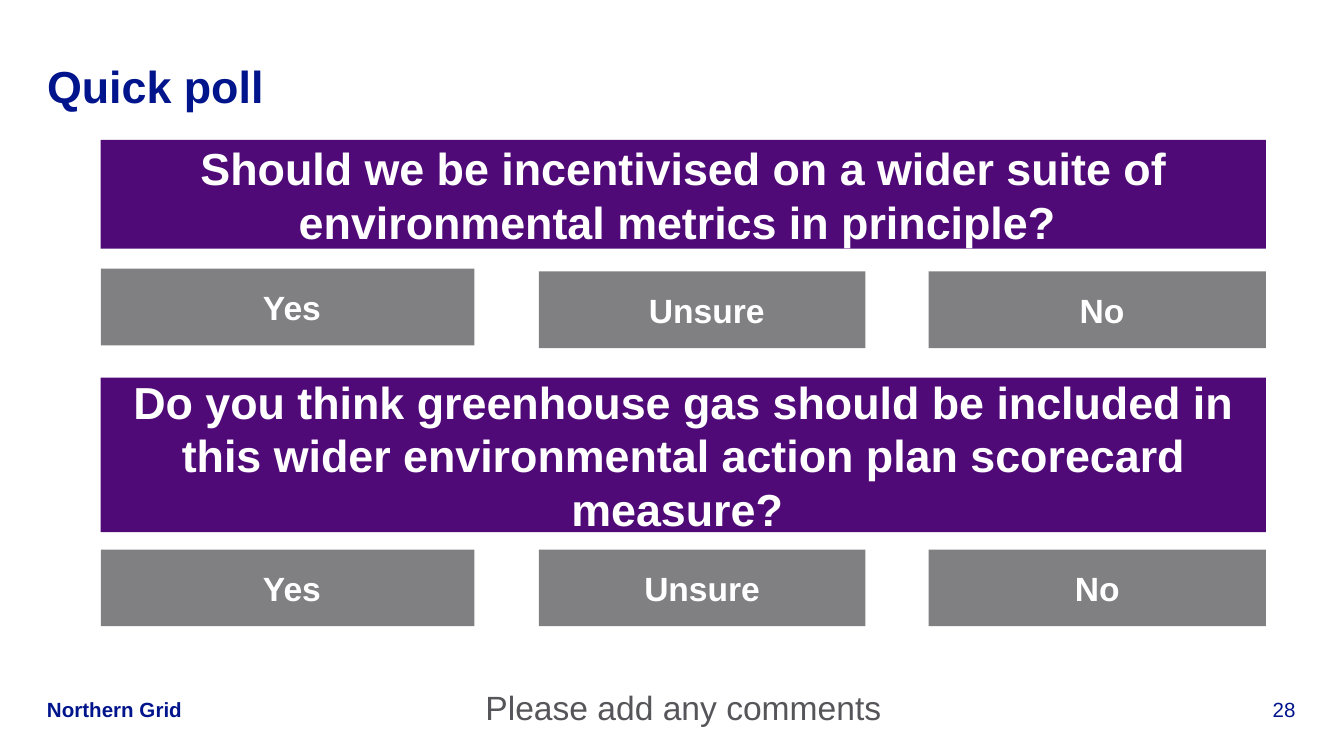
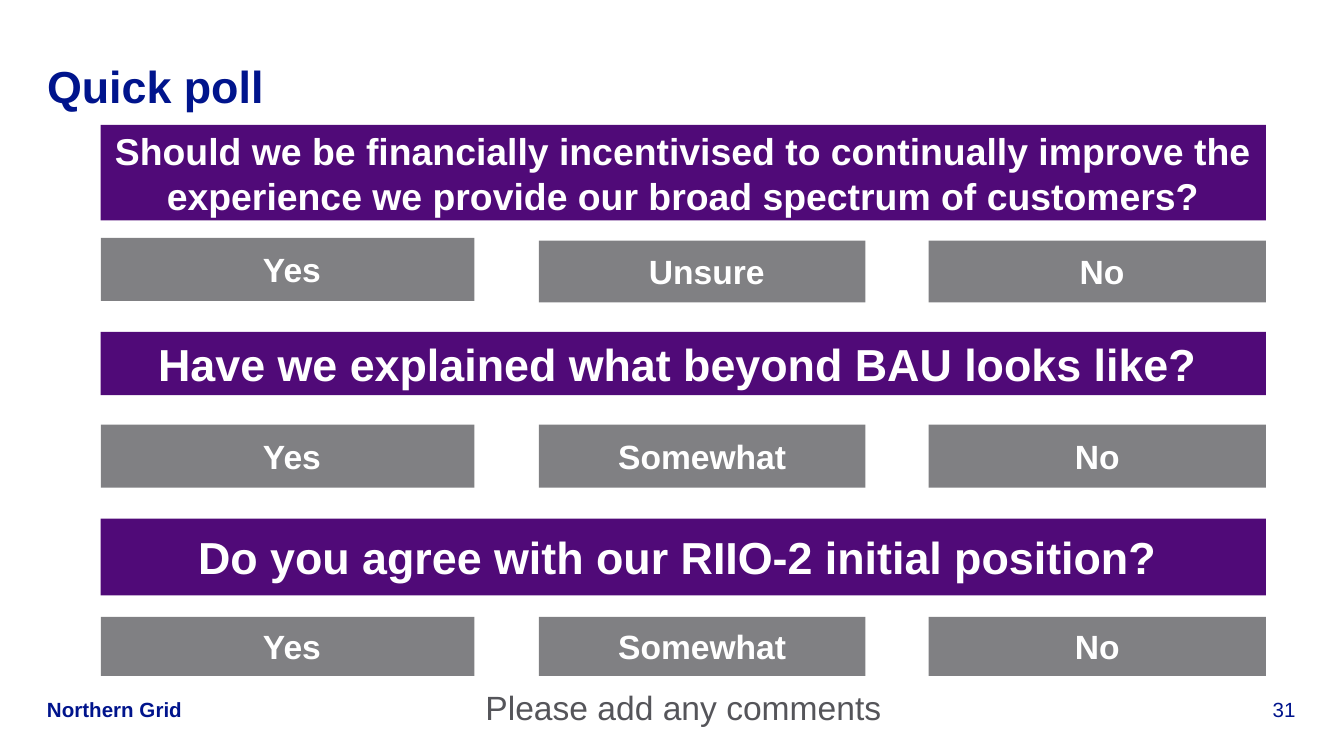
from pptx import Presentation
from pptx.dml.color import RGBColor
from pptx.enum.shapes import MSO_SHAPE
from pptx.enum.text import MSO_ANCHOR, PP_ALIGN
from pptx.util import Inches, Pt

NAVY, PURPLE, GREY, SLATE, WHITE = "00148C", "500A78", "808083", "55555A", "FFFFFF"
FONT = "Arial"
TITLE = "Quick poll"
COMPANY = "Northern Grid"
COMMENTS = "Please add any comments"

MARGIN = 0.35
CONTENT_LEFT, CONTENT_WIDTH = 0.75, 8.67
ANSWER_COLUMNS = [(0.75, 2.78), (4.01, 2.43), (6.91, 2.51)]
FOOTER_TOP, FOOTER_HEIGHT = 5.18, 0.19

POLLS = [
    {
        "number": "28",
        "questions": [
            {"text": "Should we be incentivised on a wider suite of environmental metrics in principle? ",
             "size": 24, "top": 1.04, "height": 0.81, "answers": [" Yes", " Unsure", " No"],
             "answer_tops": [2, 2.02, 2.02], "answer_heights": [0.57] * 3},
            {"text": "Do you think greenhouse gas should be included in this wider environmental "
                     "action plan scorecard measure? ",
             "size": 24, "top": 2.81, "height": 1.15, "answers": [" Yes", "Unsure", "No"],
             "answer_tops": [4.09] * 3, "answer_heights": [0.57] * 3},
        ],
    },
    {
        "number": "31",
        "questions": [
            {"text": "Should we be financially incentivised to continually improve the experience "
                     "we provide our broad spectrum of customers?",
             "size": 20, "top": 0.93, "height": 0.71, "answers": [" Yes", " Unsure", " No"],
             "answer_tops": [1.77, 1.79, 1.79], "answer_heights": [0.47, 0.46, 0.46]},
            {"text": "Have we explained what beyond BAU looks like? ",
             "size": 24, "top": 2.47, "height": 0.47, "answers": [" Yes", "Somewhat", "No"],
             "answer_tops": [3.16] * 3, "answer_heights": [0.47] * 3},
            {"text": "Do you agree with our RIIO-2 initial position? ",
             "size": 24, "top": 3.86, "height": 0.57, "answers": [" Yes", "Somewhat", "No"],
             "answer_tops": [4.59] * 3, "answer_heights": [0.44] * 3},
        ],
    },
]


def color(value):
    return RGBColor.from_string(value)


def write(shape, text, size=18, fill=WHITE, bold=False, align=PP_ALIGN.LEFT,
          anchor=MSO_ANCHOR.MIDDLE, after=0):
    frame = shape.text_frame
    frame.word_wrap = True
    frame.vertical_anchor = anchor
    paragraph = frame.paragraphs[0]
    paragraph.alignment = align
    paragraph.space_after = Pt(after)
    run = paragraph.add_run()
    run.text = text
    run.font.name = FONT
    run.font.size = Pt(size)
    run.font.bold = bold
    run.font.color.rgb = color(fill)


def add_text(slide, box, text, **style):
    shape = slide.shapes.add_textbox(*map(Inches, box))
    frame = shape.text_frame
    frame.margin_left = frame.margin_right = frame.margin_top = frame.margin_bottom = 0
    write(shape, text, **style)


def add_band(slide, box, text, background, size=18):
    shape = slide.shapes.add_shape(MSO_SHAPE.RECTANGLE, *map(Inches, box))
    shape.shadow.inherit = False
    shape.fill.solid()
    shape.fill.fore_color.rgb = color(background)
    shape.line.fill.background()
    write(shape, text, size=size, bold=True, align=PP_ALIGN.CENTER, after=6)


def add_frame(slide, number):
    add_text(slide, (9.06, FOOTER_TOP, 0.58, FOOTER_HEIGHT), number, size=11, fill=NAVY,
             align=PP_ALIGN.RIGHT, anchor=MSO_ANCHOR.BOTTOM)
    add_text(slide, (MARGIN, FOOTER_TOP, 1.1, FOOTER_HEIGHT), COMPANY, size=11, fill=NAVY,
             bold=True, anchor=MSO_ANCHOR.BOTTOM)
    add_text(slide, (MARGIN, 0.4, 9.29, 0.47), TITLE, size=24, fill=NAVY, bold=True)


def add_question(slide, question):
    add_band(slide, (CONTENT_LEFT, question["top"], CONTENT_WIDTH, question["height"]),
             question["text"], PURPLE, question["size"])
    for answer, (left, width), top, height in zip(
            question["answers"], ANSWER_COLUMNS, question["answer_tops"], question["answer_heights"]):
        add_band(slide, (left, top, width, height), answer, GREY)


def main():
    presentation = Presentation()
    presentation.slide_width = Inches(10)
    presentation.slide_height = presentation.slide_width * 9 // 16
    for poll in POLLS:
        slide = presentation.slides.add_slide(presentation.slide_layouts[6])
        add_frame(slide, poll["number"])
        for question in poll["questions"]:
            add_question(slide, question)
        add_text(slide, (CONTENT_LEFT, 5.11, CONTENT_WIDTH, 0.3), COMMENTS, fill=SLATE,
                 align=PP_ALIGN.CENTER, anchor=MSO_ANCHOR.TOP, after=6)
    presentation.save("out.pptx")


if __name__ == "__main__":
    main()
